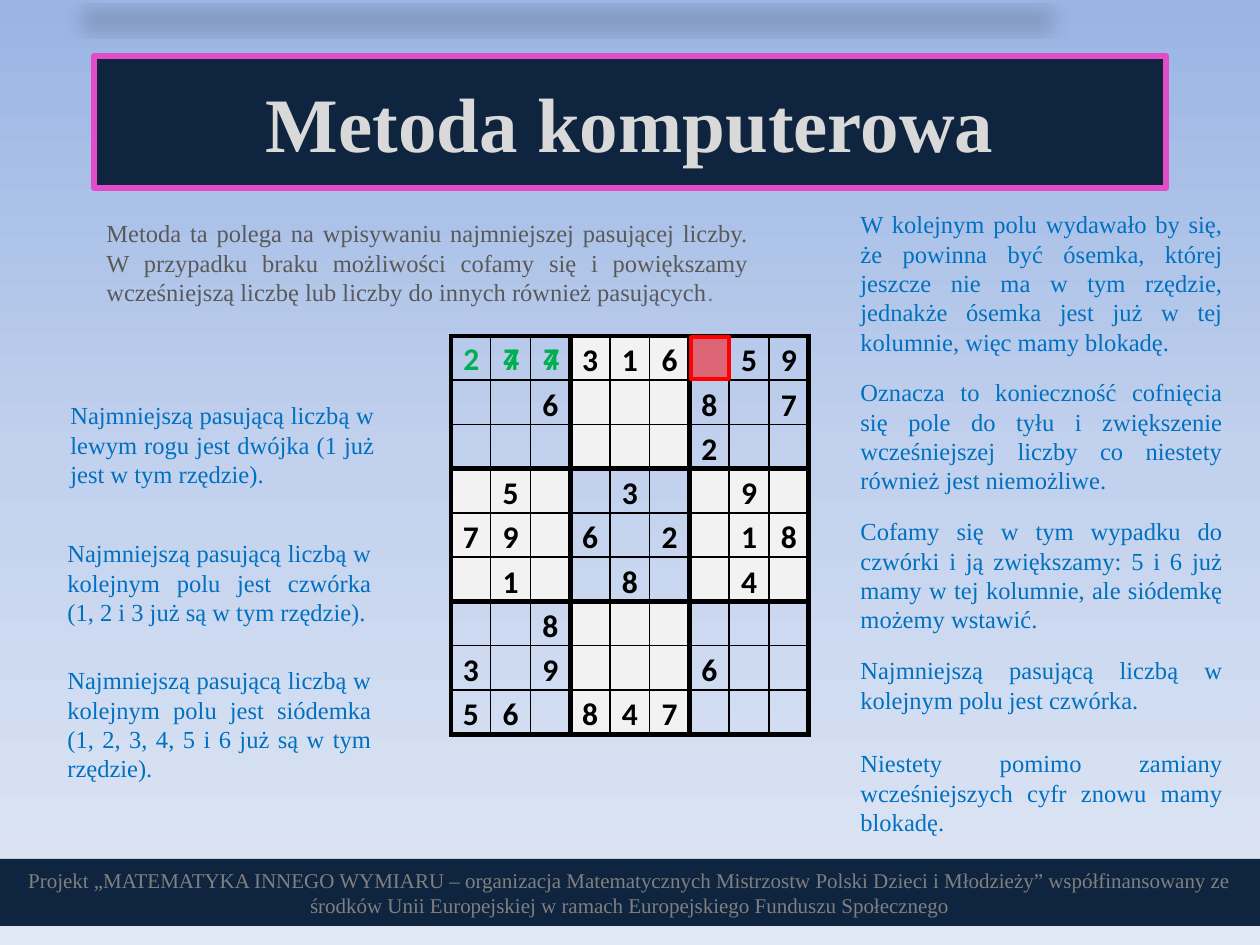
from lxml import etree
from pptx import Presentation, util as u
from pptx.dml.color import RGBColor
from pptx.enum import shapes, text
from pptx.oxml.ns import qn

SCALE = 914400 / 126
COLORS = {
    "top": "9AB5E4", "mid": "C2D1ED", "low": "E1E8F5",
    "navy": "0F243E", "pink": "E24CC9", "pale": "D9D9D9",
    "gray": "808080", "dark": "595959", "blue": "0070C0",
    "green": "00B050", "red": "FF0000", "black": "000000", "cell": "F2F2F2",
}
SERIF, SANS = "Times New Roman", "Calibri"
GRID = [
    "...316.59",
    "..6...8.7",
    "......2..",
    ".5..3..9.",
    "79.6.2.18",
    ".1..8..4.",
    "..8......",
    "3.9...6..",
    "56.847...",
]
INTRO = ("Metoda ta polega na wpisywaniu najmniejszej pasującej liczby. "
         "W przypadku braku możliwości cofamy się i powiększamy "
         "wcześniejszą liczbę lub liczby do innych również pasujących")
NOTES = [
    (58, 394, 329, 102, "Najmniejszą pasującą liczbą w lewym rogu jest dwójka "
     "(1 już jest w tym rzędzie)."),
    (55, 532, 329, 102, "Najmniejszą pasującą liczbą w kolejnym polu jest czwórka "
     "(1, 2 i 3 już są w tym rzędzie)."),
    (55, 659, 329, 131, "Najmniejszą pasującą liczbą w kolejnym polu jest siódemka "
     "(1, 2, 3, 4, 5 i 6 już są w tym rzędzie)."),
    (848, 203, 387, 161, "W kolejnym polu wydawało by się, że powinna być ósemka, "
     "której jeszcze nie ma w tym rzędzie, jednakże ósemka jest już w tej "
     "kolumnie, więc mamy blokadę."),
    (848, 371, 387, 131, "Oznacza to konieczność cofnięcia się pole do tyłu i "
     "zwiększenie wcześniejszej liczby co niestety również jest niemożliwe."),
    (848, 510, 387, 131, "Cofamy się w tym wypadku do czwórki i ją zwiększamy: "
     "5 i 6 już mamy w tej kolumnie, ale siódemkę możemy wstawić."),
    (848, 649, 387, 72, "Najmniejszą pasującą liczbą w kolejnym polu jest czwórka."),
    (848, 742, 387, 102, "Niestety pomimo zamiany wcześniejszych cyfr znowu mamy "
     "blokadę."),
]
FOOTER = ("Projekt „MATEMATYKA INNEGO WYMIARU – organizacja Matematycznych "
          "Mistrzostw Polski Dzieci i Młodzieży” współfinansowany ze środków "
          "Unii Europejskiej w ramach Europejskiego Funduszu Społecznego")


def px(*nums):
    return [u.Emu(round(n * SCALE)) for n in nums]


def rgb(name):
    return RGBColor.from_string(COLORS[name])


def node(parent, tag, **attrs):
    return etree.SubElement(parent, qn(tag), {k: str(v) for k, v in attrs.items()})


def tint(parent, name):
    return node(parent, "a:srgbClr", val=COLORS[name])


def add_run(para, words, size, color, font=SERIF, bold=False):
    run = para.add_run()
    run.text = words
    run.font.size = u.Pt(size)
    run.font.name = font
    run.font.bold = bold
    run.font.color.rgb = rgb(color)


def add_text(slide, box, runs, align=text.PP_ALIGN.JUSTIFY, wrap=True):
    frame = slide.shapes.add_textbox(*px(*box)).text_frame
    frame.word_wrap = wrap
    frame.auto_size = text.MSO_AUTO_SIZE.SHAPE_TO_FIT_TEXT
    para = frame.paragraphs[0]
    para.alignment = align
    for run in runs:
        add_run(para, *run)


def add_rect(slide, box, fill):
    rect = slide.shapes.add_shape(shapes.MSO_SHAPE.RECTANGLE, *px(*box))
    rect.shadow.inherit = False
    rect.fill.solid()
    rect.fill.fore_color.rgb = rgb(fill)
    rect.line.fill.background()
    return rect


def set_line(shape, color, width):
    shape.line.color.rgb = rgb(color)
    shape.line.width = u.Pt(width)


def paint_back(slide):
    fill = slide.background.fill
    fill.gradient()
    fill.gradient_angle = 270
    stops = slide.element.xpath(".//p:bg//a:gsLst")[0]
    for stop in list(stops):
        stops.remove(stop)
    for pos, name in enumerate(("top", "mid", "low")):
        tint(node(stops, "a:gs", pos=pos * 50000), name)


def add_edges(cell, row, col):
    props = cell._tc.get_or_add_tcPr()
    thick = {"L": col % 3 == 0, "R": col % 3 == 2,
             "T": row % 3 == 0, "B": row % 3 == 2}
    for side, heavy in thick.items():
        edge = node(props, f"a:ln{side}", w=u.Pt(3 if heavy else 1))
        tint(node(edge, "a:solidFill"), "black")


def fill_cell(cell, row, col, digit):
    cell.margin_left, cell.margin_right = px(9, 9)
    cell.margin_top = cell.margin_bottom = 0
    cell.vertical_anchor = text.MSO_ANCHOR.MIDDLE
    add_edges(cell, row, col)
    if (row // 3 + col // 3) % 2:
        cell.fill.solid()
        cell.fill.fore_color.rgb = rgb("cell")
    else:
        cell.fill.background()
    para = cell.text_frame.paragraphs[0]
    para.alignment = text.PP_ALIGN.CENTER
    para.line_spacing = 1.15
    if digit != ".":
        add_run(para, digit, 18, "black", SANS, True)


def add_grid(slide):
    size = len(GRID)
    frame = slide.shapes.add_table(size, size, *px(451, 336, 358, 398))
    table = frame.table
    table.first_row = table.horz_banding = False
    for row, digits in enumerate(GRID):
        for col, digit in enumerate(digits):
            fill_cell(table.cell(row, col), row, col, digit)


def add_title(slide):
    title = slide.shapes.title
    title.left, title.top, title.width, title.height = px(94, 56, 1072, 132)
    title.fill.solid()
    title.fill.fore_color.rgb = rgb("navy")
    set_line(title, "pink", 3.5)
    effects = node(title.element.spPr, "a:effectLst")
    shade = node(effects, "a:outerShdw", blurRad=u.Pt(12), dist=u.Pt(25),
                 dir=5400000, sx=90000, sy=-19000, rotWithShape=0)
    node(tint(shade, "black"), "a:alpha", val=15000)
    frame = title.text_frame
    frame.auto_size = text.MSO_AUTO_SIZE.NONE
    frame.vertical_anchor = text.MSO_ANCHOR.MIDDLE
    para = frame.paragraphs[0]
    para.alignment = text.PP_ALIGN.CENTER
    add_run(para, "Metoda komputerowa", 44, "pale", bold=True)
    slide.shapes.element.append(title.element)


def add_footer(slide):
    bar = add_rect(slide, (0, 859, 1260, 67), "navy")
    frame = bar.text_frame
    frame.word_wrap = True
    frame.vertical_anchor = text.MSO_ANCHOR.MIDDLE
    para = frame.paragraphs[0]
    para.alignment = text.PP_ALIGN.CENTER
    add_run(para, FOOTER, 12, "gray")


def add_block(slide):
    rect = add_rect(slide, (691, 337, 38, 42), "red")
    set_line(rect, "red", 2)
    color = rect.element.spPr.find(qn("a:solidFill"))[0]
    node(color, "a:alpha", val=50000)


def main():
    deck = Presentation()
    deck.slide_width, deck.slide_height = px(1260, 945)
    slide = deck.slides.add_slide(deck.slide_layouts[5])
    paint_back(slide)
    add_grid(slide)
    add_text(slide, (94, 212, 667, 102),
             [(INTRO, 14, "dark"), (".", 14, "gray")])
    for *box, words in NOTES:
        add_text(slide, box, [(words, 14, "blue")])
    for col, digits in enumerate(("2", "47", "74")):
        for digit in digits:
            add_text(slide, (451 + 40 * col, 333, 42, 50),
                     [(digit, 18, "green", SANS, True)],
                     text.PP_ALIGN.LEFT, False)
    add_block(slide)
    add_footer(slide)
    add_title(slide)
    deck.save("out.pptx")


if __name__ == "__main__":
    main()
